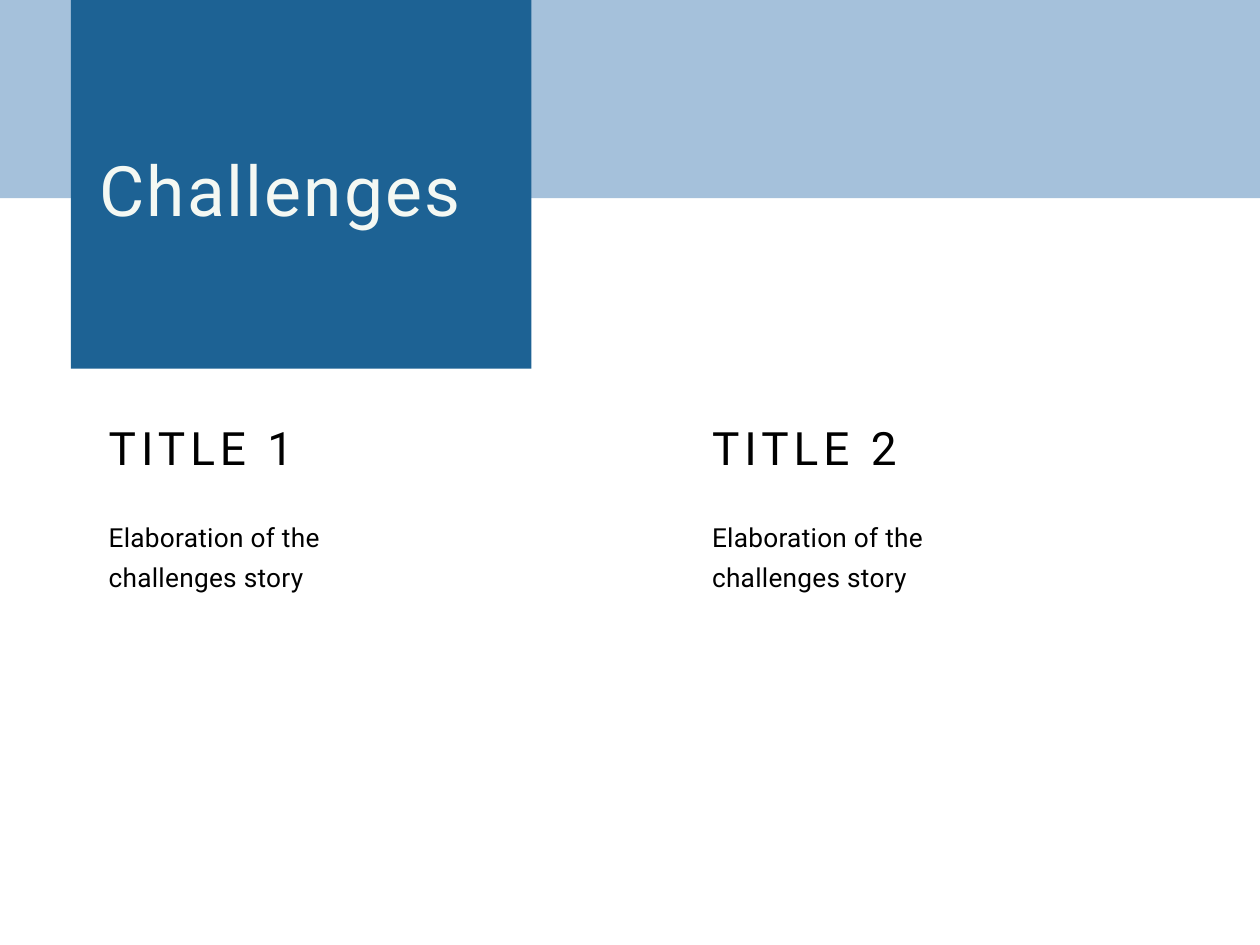
import pptx
import pptx.dml.color
import pptx.enum.shapes
import pptx.enum.text
import pptx.oxml.ns
import pptx.util
from dataclasses import dataclass
from lxml import etree

Pt = pptx.util.Pt


@dataclass(frozen=True)
class TextStyle:
    size: float
    line: float
    tracking: float
    color: str


class Theme:
    font = "Roboto"
    band = "A5C1DB"
    panel = "1D6294"
    heading = TextStyle(42.4, 50.9, 1.3, "F4F8F3")
    column_title = TextStyle(28, 33.6, 3.1, "000000")
    column_text = TextStyle(16, 24, 0.2, "000000")


SLIDE_WIDTH, SLIDE_HEIGHT = 768.24, 576
COMPARISON_LAYOUT = 4
COLUMN_LEFT, COLUMN_STEP, COLUMN_WIDTH = 66.24, 367.92, 211.68
COLUMNS = [
    ("TITLE 1", "Elaboration of the challenges story"),
    ("TITLE 2", "Elaboration of the challenges story"),
]


def rgb(color):
    return pptx.dml.color.RGBColor.from_string(color)


def add_backdrop(slide, left, top, width, height, color):
    block = slide.shapes.add_shape(
        pptx.enum.shapes.MSO_SHAPE.RECTANGLE,
        Pt(left), Pt(top), Pt(width), Pt(height))
    block.shadow.inherit = False
    block.fill.solid()
    block.fill.fore_color.rgb = rgb(color)
    block.line.fill.background()


def fill_placeholder(placeholder, text, style, left, top, width, height):
    """Place one paragraph, free of the template's bullet, and bring it to the front."""
    placeholder.left, placeholder.top = Pt(left), Pt(top)
    placeholder.width, placeholder.height = Pt(width), Pt(height)
    frame = placeholder.text_frame
    frame.margin_left = frame.margin_right = 0
    frame.margin_top = frame.margin_bottom = 0
    frame.word_wrap = True
    frame.auto_size = pptx.enum.text.MSO_AUTO_SIZE.NONE
    frame.vertical_anchor = pptx.enum.text.MSO_ANCHOR.TOP

    paragraph = frame.paragraphs[0]
    paragraph.alignment = pptx.enum.text.PP_ALIGN.LEFT
    paragraph.line_spacing = Pt(style.line)
    paragraph.space_before = Pt(0)
    properties = paragraph._p.get_or_add_pPr()
    properties.set("marL", "0")
    properties.set("indent", "0")
    etree.SubElement(properties, pptx.oxml.ns.qn("a:buNone"))

    run = paragraph.add_run()
    run.text = text
    run.font.name = Theme.font
    run.font.size = Pt(style.size)
    run.font.bold = False
    run.font.color.rgb = rgb(style.color)
    run._r.get_or_add_rPr().set("spc", str(round(style.tracking * 100)))

    element = placeholder._element
    element.getparent().append(element)


def main():
    deck = pptx.Presentation()
    deck.slide_width, deck.slide_height = Pt(SLIDE_WIDTH), Pt(SLIDE_HEIGHT)
    slide = deck.slides.add_slide(deck.slide_layouts[COMPARISON_LAYOUT])
    heading, *column_parts = list(slide.placeholders)

    add_backdrop(slide, 0, 0, SLIDE_WIDTH, 120.75, Theme.band)
    add_backdrop(slide, 43.2, 0, 280.8, 224.64, Theme.panel)
    fill_placeholder(heading, "Challenges", Theme.heading, 60.6, 89.28, 263.4, 48.24)

    for index, (title, story) in enumerate(COLUMNS):
        title_part, story_part = column_parts[2 * index:2 * index + 2]
        left = COLUMN_LEFT + index * COLUMN_STEP
        fill_placeholder(title_part, title, Theme.column_title,
                         left, 255.6, COLUMN_WIDTH, 33.12)
        fill_placeholder(story_part, story, Theme.column_text,
                         left, 313.2, COLUMN_WIDTH, 48.24)

    deck.save("out.pptx")


if __name__ == "__main__":
    main()
